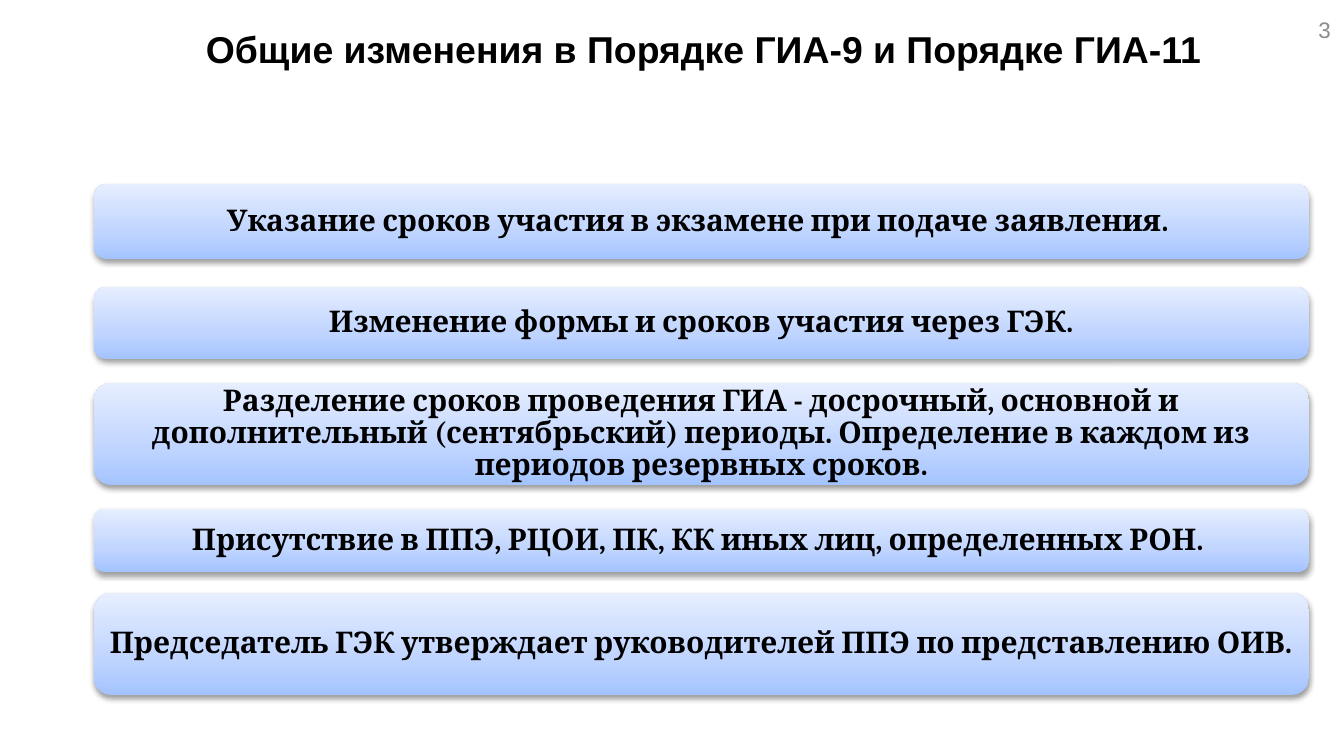
from typing import NamedTuple

from lxml import etree
from pptx import Presentation
from pptx.dml.color import RGBColor
from pptx.enum.shapes import MSO_SHAPE
from pptx.enum.text import MSO_ANCHOR, MSO_AUTO_SIZE, PP_ALIGN
from pptx.oxml.ns import qn
from pptx.util import Emu, Pt

ROUNDED = MSO_SHAPE.ROUNDED_RECTANGLE
TOP, MIDDLE = MSO_ANCHOR.TOP, MSO_ANCHOR.MIDDLE
CENTER, RIGHT = PP_ALIGN.CENTER, PP_ALIGN.RIGHT
NO_AUTOFIT = MSO_AUTO_SIZE.NONE
TITLE_ONLY_LAYOUT = 5

EMU_PER_PX = 914400 / 134.4
BAR_LEFT, BAR_WIDTH = 94, 1215
BAR_INSET = 9
GRADIENT_STOPS = ((0, "A4C4FF"), (35, "BFD4FF"), (100, "E6EEFF"))

TITLE_FORMAT = {"name": "Arial", "size": Pt(20), "bold": True}
NUMBER_FORMAT = {"name": "Arial", "size": Pt(12), "bold": False}
BAR_FORMAT = {"name": "Cambria", "size": Pt(16), "bold": True}


class Bar(NamedTuple):
    top: int
    height: int
    text: str


BARS = (
    Bar(184, 75, "Указание сроков участия в экзамене при подаче заявления. "),
    Bar(287, 72, "Изменение формы и сроков участия через ГЭК."),
    Bar(383, 102, "Разделение сроков проведения ГИА - досрочный, основной и "
                  "дополнительный (сентябрьский) периоды. Определение в каждом "
                  "из периодов резервных сроков."),
    Bar(509, 63, "Присутствие в ППЭ, РЦОИ, ПК, КК иных лиц, определенных РОН. "),
    Bar(593, 102, "Председатель ГЭК утверждает руководителей ППЭ "
                  "по представлению ОИВ."),
)


def px(length: int) -> Emu:
    return Emu(round(length * EMU_PER_PX))


def color(value: str) -> RGBColor:
    return RGBColor.from_string(value)


def write_text(shape, text: str, font_format: dict, text_color: str,
               alignment, anchor) -> None:
    frame = shape.text_frame
    frame.word_wrap = True
    frame.auto_size = NO_AUTOFIT
    frame.vertical_anchor = anchor
    paragraph = frame.paragraphs[0]
    paragraph.alignment = alignment
    run = paragraph.add_run()
    run.text = text
    for name, value in font_format.items():
        setattr(run.font, name, value)
    run.font.color.rgb = color(text_color)


def add_color(parent, value: str):
    return etree.SubElement(parent, qn("a:srgbClr"), val=value)


def fill_with_gradient(shape) -> None:
    """Fill from the bottom edge upwards with three colour stops."""
    shape.fill.gradient()
    shape.fill.gradient_angle = 90
    stop_list = shape._element.spPr.find(qn("a:gradFill")).find(qn("a:gsLst"))
    for stop in list(stop_list):
        stop_list.remove(stop)
    for percent, value in GRADIENT_STOPS:
        stop = etree.SubElement(stop_list, qn("a:gs"), pos=str(percent * 1000))
        add_color(stop, value)


def add_soft_shadow(shape) -> None:
    shape.shadow.inherit = False
    effects = shape._element.spPr.find(qn("a:effectLst"))
    shadow = etree.SubElement(effects, qn("a:outerShdw"), blurRad=str(Pt(3.1)),
                              dist=str(Pt(1.6)), dir="5400000", rotWithShape="0")
    etree.SubElement(add_color(shadow, "000000"), qn("a:alpha"), val="38000")


def draw_bar(slide, bar: Bar) -> None:
    shape = slide.shapes.add_shape(ROUNDED, px(BAR_LEFT), px(bar.top),
                                   px(BAR_WIDTH), px(bar.height))
    shape.adjustments[0] = 0.17
    fill_with_gradient(shape)
    shape.line.fill.background()
    add_soft_shadow(shape)
    frame = shape.text_frame
    for side in ("left", "top", "right", "bottom"):
        setattr(frame, f"margin_{side}", px(BAR_INSET))
    write_text(shape, bar.text, BAR_FORMAT, "000000", CENTER, MIDDLE)
    frame.paragraphs[0].line_spacing = 0.9


def main() -> None:
    presentation = Presentation()
    presentation.slide_width, presentation.slide_height = px(1344), px(756)
    layout = presentation.slide_layouts[TITLE_ONLY_LAYOUT]
    slide = presentation.slides.add_slide(layout)

    title = slide.shapes.title
    title.left, title.top, title.width, title.height = map(px, (95, 19, 1218, 113))
    write_text(title, "Общие изменения в Порядке ГИА-9 и Порядке ГИА-11",
               TITLE_FORMAT, "000000", CENTER, TOP)

    number = slide.shapes.add_textbox(px(1031), px(3), px(313), px(54))
    write_text(number, "3", NUMBER_FORMAT, "8C8C8C", RIGHT, MIDDLE)

    for bar in BARS:
        draw_bar(slide, bar)
    presentation.save("out.pptx")


if __name__ == "__main__":
    main()
